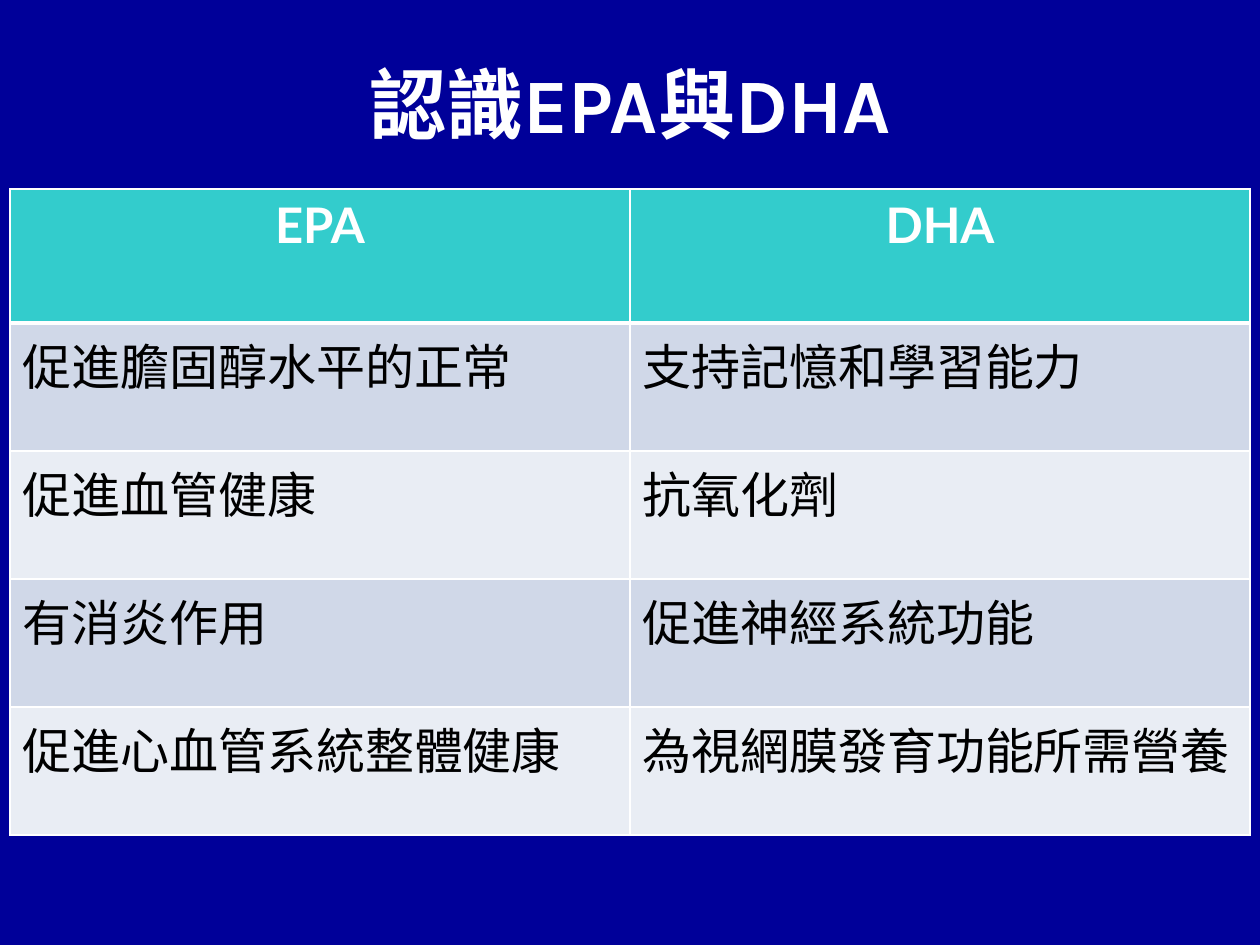
from dataclasses import dataclass

import lxml.etree
import pptx
import pptx.dml.color
import pptx.enum.text
import pptx.oxml.ns
import pptx.util

EMU_PER_PX = 914400 / 126


@dataclass(frozen=True)
class Theme:
    background: str = "000099"
    light: str = "FFFFFF"
    dark: str = "000000"
    header: str = "33CCCC"
    bands: tuple[str, str] = ("D0D8E8", "E9EDF4")
    title_font: str = "Karla"
    body_font: str = "Lato"
    title_size: int = 44
    body_size: int = 28
    rule: int = 1
    header_rule: int = 3


@dataclass(frozen=True)
class TextStyle:
    font: str
    size: int
    color: str
    bold: bool
    align: pptx.enum.text.PP_ALIGN


@dataclass(frozen=True)
class Benefit:
    epa: str
    dha: str


THEME = Theme()
CENTER = pptx.enum.text.PP_ALIGN.CENTER
TITLE = TextStyle(THEME.title_font, THEME.title_size, THEME.light, True, CENTER)
HEADER = TextStyle(THEME.body_font, THEME.body_size, THEME.light, True, CENTER)
BODY = TextStyle(THEME.body_font, THEME.body_size, THEME.dark, False,
                 pptx.enum.text.PP_ALIGN.LEFT)

ROWS = [
    Benefit("EPA", "DHA"),
    Benefit("促進膽固醇水平的正常", "支持記憶和學習能力"),
    Benefit("促進血管健康", "抗氧化劑"),
    Benefit("有消炎作用", "促進神經系統功能"),
    Benefit("促進心血管系統整體健康", "為視網膜發育功能所需營養"),
]
COLUMN_WIDTH, HEADER_HEIGHT, ROW_HEIGHT = 620, 134, 128


def px(length: int) -> pptx.util.Emu:
    return pptx.util.Emu(round(length * EMU_PER_PX))


def rgb(color: str) -> pptx.dml.color.RGBColor:
    return pptx.dml.color.RGBColor.from_string(color)


def write(frame, text: str, style: TextStyle) -> None:
    paragraph = frame.paragraphs[0]
    paragraph.text = text
    paragraph.alignment = style.align
    paragraph.font.name = style.font
    paragraph.font.size = pptx.util.Pt(style.size)
    paragraph.font.bold = style.bold
    paragraph.font.color.rgb = rgb(style.color)


def set_borders(cell, top: int, bottom: int) -> None:
    """Rule all four sides; the borders must come before the cell's fill."""
    qn = pptx.oxml.ns.qn
    properties = cell._tc.get_or_add_tcPr()
    widths = {"a:lnL": THEME.rule, "a:lnR": THEME.rule, "a:lnT": top, "a:lnB": bottom}
    for position, (side, width) in enumerate(widths.items()):
        line = lxml.etree.Element(qn(side), w=str(pptx.util.Pt(width)))
        fill = lxml.etree.SubElement(line, qn("a:solidFill"))
        lxml.etree.SubElement(fill, qn("a:srgbClr"), val=THEME.light)
        properties.insert(position, line)


def add_title(slide, text: str) -> None:
    frame = slide.shapes.add_textbox(px(63), px(38), px(1134), px(130)).text_frame
    frame.word_wrap = True
    frame.vertical_anchor = pptx.enum.text.MSO_ANCHOR.MIDDLE
    write(frame, text, TITLE)


def add_comparison(slide, benefits: list[Benefit]) -> None:
    height = HEADER_HEIGHT + ROW_HEIGHT * (len(benefits) - 1)
    table = slide.shapes.add_table(len(benefits), 2, px(10), px(189),
                                   px(2 * COLUMN_WIDTH), px(height)).table
    for column in table.columns:
        column.width = px(COLUMN_WIDTH)
    for index, benefit in enumerate(benefits):
        is_header = index == 0
        table.rows[index].height = px(HEADER_HEIGHT if is_header else ROW_HEIGHT)
        color = THEME.header if is_header else THEME.bands[(index - 1) % 2]
        top = THEME.header_rule if index == 1 else THEME.rule
        bottom = THEME.header_rule if is_header else THEME.rule
        for column, text in enumerate((benefit.epa, benefit.dha)):
            cell = table.cell(index, column)
            cell.fill.solid()
            cell.fill.fore_color.rgb = rgb(color)
            set_borders(cell, top, bottom)
            write(cell.text_frame, text, HEADER if is_header else BODY)


def main() -> None:
    deck = pptx.Presentation()
    deck.slide_width, deck.slide_height = px(1260), px(945)
    slide = deck.slides.add_slide(deck.slide_layouts[6])
    slide.background.fill.solid()
    slide.background.fill.fore_color.rgb = rgb(THEME.background)
    add_title(slide, "認識EPA與DHA")
    add_comparison(slide, ROWS)
    deck.save("out.pptx")


if __name__ == "__main__":
    main()
